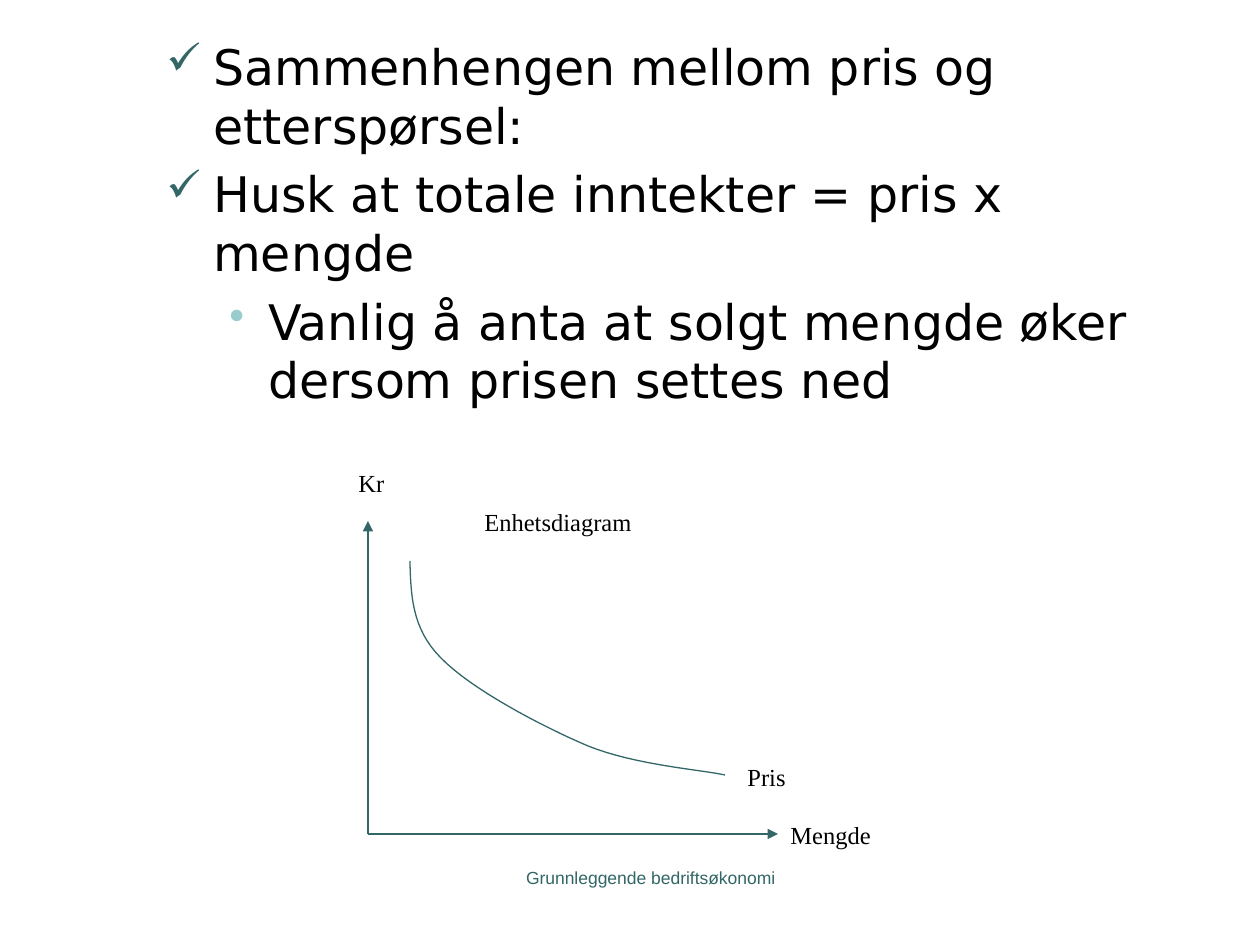
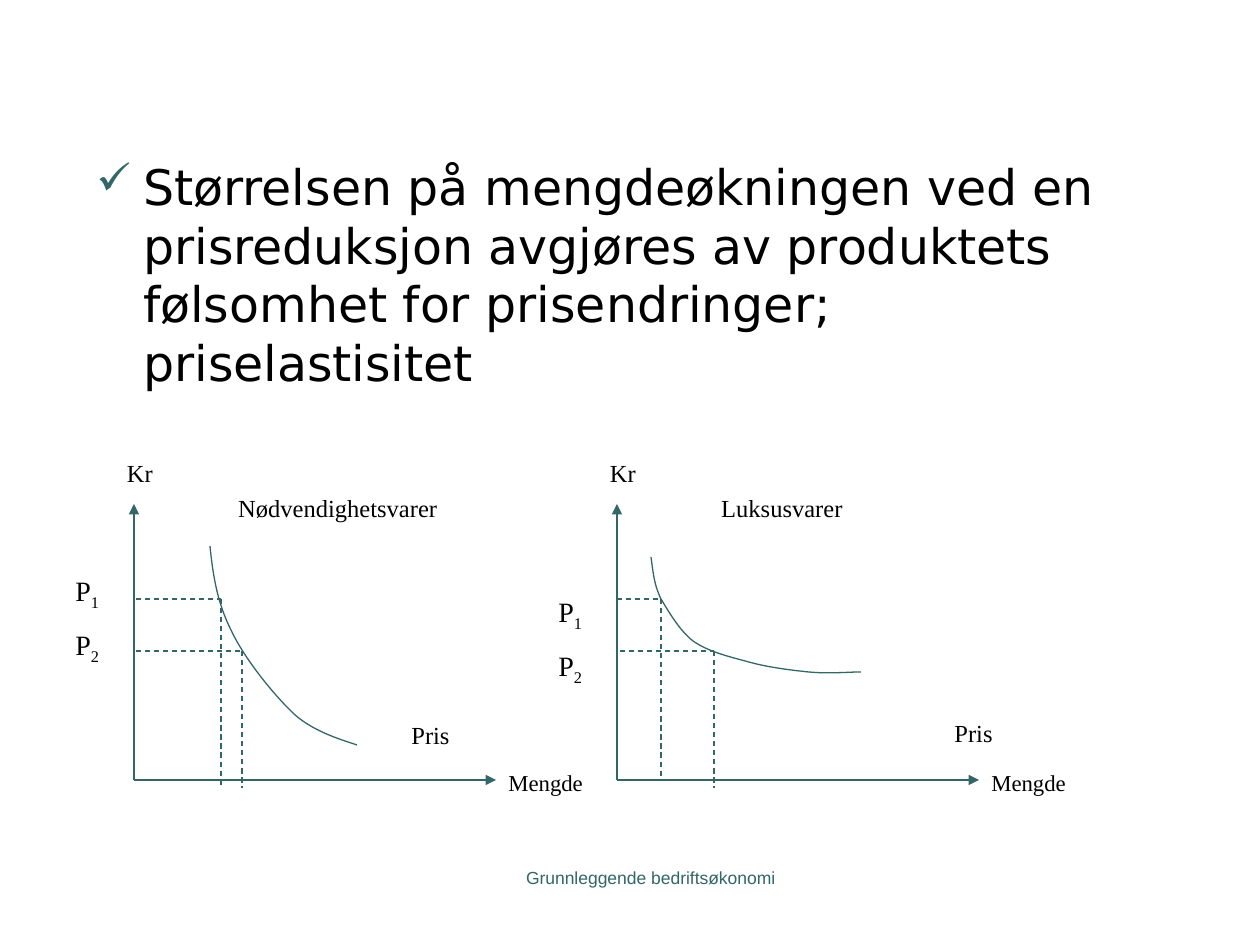
import pptx
import pptx.util
import pptx.dml.color
import pptx.enum.dml
import pptx.enum.shapes
import pptx.enum.text
import pptx.oxml
import pptx.oxml.ns

PX = 914400 / 126  # EMU in one px
TEAL, AQUA, BLACK = "336666", "99CCCC", "000000"
BODY, LABEL, FOOT = "DejaVu Sans", "Times New Roman", "Arial"
WIDTH = 410  # axis length at which the label offsets hold


def emu(px):
    return pptx.util.Emu(round(px * PX))


def color(code):
    return pptx.dml.color.RGBColor.from_string(code)


def add_xml(parent, tag, **attrs):
    node = pptx.oxml.parse_xml(f'<a:{tag} {pptx.oxml.ns.nsdecls("a")}/>')
    for key, value in attrs.items():
        node.set(key, value)
    parent.append(node)
    return node


def style(para, font, size, code):
    para.font.name = font
    para.font.size = pptx.util.Pt(size)
    para.font.color.rgb = color(code)


def add_box(shapes, x, y, w, h):
    frame = shapes.add_textbox(emu(x), emu(y), emu(w), emu(h)).text_frame
    frame.word_wrap = True
    return frame


def next_para(frame, count, gap):
    """Return the paragraph at this count, with a gap above all but the first."""
    if count == 0:
        return frame.paragraphs[0]
    para = frame.add_paragraph()
    para.space_before = pptx.util.Pt(gap)
    return para


def add_label(shapes, text, x, y, w, size=14):
    para = add_box(shapes, x, y, w, 42).paragraphs[0]
    para.text = text
    style(para, LABEL, size, BLACK)


def add_foot(slide):
    para = add_box(slide.shapes, 451, 861, 399, 63).paragraphs[0]
    para.text = "Grunnleggende bedriftsøkonomi"
    para.alignment = pptx.enum.text.PP_ALIGN.CENTER
    style(para, FOOT, 10, TEAL)


def add_body(slide, box, items):
    """Bulleted text; each item is a level and its wording."""
    looks = [("✓", TEAL, 47, -47), ("•", AQUA, 102, -39)]
    frame = add_box(slide.shapes, *box)
    for count, (level, text) in enumerate(items):
        mark, code, left, hang = looks[level]
        para = next_para(frame, count, 5.6)
        para.text = text
        para.level = level
        props = para._p.get_or_add_pPr()
        props.set("marL", str(emu(left)))
        props.set("indent", str(emu(hang)))
        add_xml(add_xml(props, "buClr"), "srgbClr", val=code)
        add_xml(props, "buSzPct", val="90000")
        add_xml(props, "buChar", char=mark)
        style(para, BODY, 28, BLACK)


def add_line(shapes, x1, y1, x2, y2, dash=False):
    """A dashed guide, or an axis with an arrowhead."""
    kind = pptx.enum.shapes.MSO_CONNECTOR.STRAIGHT
    line = shapes.add_connector(kind, emu(x1), emu(y1), emu(x2), emu(y2))
    line.line.color.rgb = color(TEAL)
    line.line.width = pptx.util.Pt(0.75)
    if dash:
        line.line.dash_style = pptx.enum.dml.MSO_LINE.DASH
    else:
        add_xml(line.line._get_or_add_ln(), "tailEnd", type="triangle")
    add_xml(line._element.spPr, "effectLst")


def trace(knots, steps=16):
    """Points along joined cubic curves: a start, then three knots each."""
    spots = [knots[0]]
    for i in range(0, len(knots) - 1, 3):
        for step in range(1, steps + 1):
            t = step / steps
            parts = ((1 - t) ** 3, 3 * t * (1 - t) ** 2, 3 * t * t * (1 - t), t ** 3)
            spots.append(tuple(
                sum(part * knot[axis] for part, knot in zip(parts, knots[i:i + 4]))
                for axis in (0, 1)))
    return spots


def add_curve(shapes, x, y, knots):
    spots = [(emu(x + dx), emu(y + dy)) for dx, dy in trace(knots)]
    pen = shapes.build_freeform(*spots[0])
    pen.add_line_segments(spots[1:], close=False)
    curve = pen.convert_to_shape()
    curve.shadow.inherit = False
    curve.fill.background()
    curve.line.color.rgb = color(TEAL)
    curve.line.width = pptx.util.Pt(0.75)


def add_steps(shapes, x, y, top, guides):
    """Price marks and the dashed lines from each price to its quantity."""
    frame = add_box(shapes, x - 71, y + top, 53, 97)
    for count, (start, right, level, end) in enumerate(guides):
        para = next_para(frame, count, 9)
        para.add_run().text = "P"
        sub = para.add_run()
        sub.text = str(count + 1)
        sub.font._element.set("baseline", "-25000")
        style(para, LABEL, 16, BLACK)
        add_line(shapes, x + start, y + level, x + right, y + level, True)
        add_line(shapes, x + right, y + level, x + right, y + end, True)


def add_plot(slide, box, title, knots, price, size=14, top=0, guides=()):
    """Demand diagram; the box is spanned by the two axes."""
    x, y, w, h = box
    shapes = slide.shapes.add_group_shape().shapes
    ratio = w / WIDTH
    # Labels
    for text, dx, dy, wide, points in (
            ("Kr", -22, -59, 73, 14), (title, 104, -20, 262, 14),
            ("Mengde", 410, 293, 116, size)):
        add_label(shapes, text, x + dx * ratio, y + dy * ratio, wide * ratio, points)
    add_label(shapes, "Pris", x + price[0], y + price[1], 105 * ratio)
    # Axes and curve
    add_line(shapes, x, y + h, x, y)
    add_line(shapes, x, y + h, x + w, y + h)
    add_curve(shapes, x, y, knots)
    if guides:
        add_steps(shapes, x, y, top, guides)


def add_demand(deck):
    slide = deck.slides.add_slide(deck.slide_layouts[6])
    add_foot(slide)
    add_body(slide, (154, 30, 1071, 619), [
        (0, "Sammenhengen mellom pris og etterspørsel:"),
        (0, "Husk at totale inntekter = pris x mengde"),
        (1, "Vanlig å anta at solgt mengde øker dersom prisen settes ned")])
    add_plot(slide, (368, 521, WIDTH, 313), "Enhetsdiagram", [
        (42, 40), (43, 72), (43, 107), (73, 137), (103, 168), (173, 205),
        (220, 225), (267, 244), (334, 249), (357, 254)], (367, 235))


def add_goods(deck):
    slide = deck.slides.add_slide(deck.slide_layouts[6])
    add_foot(slide)
    add_body(slide, (84, 150, 1071, 620), [
        (0, "Størrelsen på mengdeøkningen ved en prisreduksjon avgjøres av "
            "produktets følsomhet for prisendringer; priselastisitet")])
    add_plot(slide, (134, 504, 362, 276), "Nødvendighetsvarer", [
        (76, 42), (79, 71), (83, 98), (97, 126), (110, 154), (139, 190),
        (160, 210), (181, 229), (212, 237), (223, 241)], (265, 210), 13, 63,
        [(2, 87, 95, 284), (2, 108, 147, 284)])
    add_plot(slide, (617, 504, 362, 276), "Luksusvarer", [
        (34, 53), (36, 67), (37, 81), (44, 95), (52, 108), (62, 126),
        (76, 137), (90, 147), (109, 152), (128, 157), (148, 163), (172, 166),
        (191, 168), (211, 170), (235, 168), (244, 168)], (325, 208), 13, 84,
        [(0, 44, 95, 273), (3, 97, 147, 284)])


def main():
    deck = pptx.Presentation()
    deck.slide_width, deck.slide_height = emu(1260), emu(945)
    add_demand(deck)
    add_goods(deck)
    deck.save("out.pptx")


if __name__ == "__main__":
    main()
